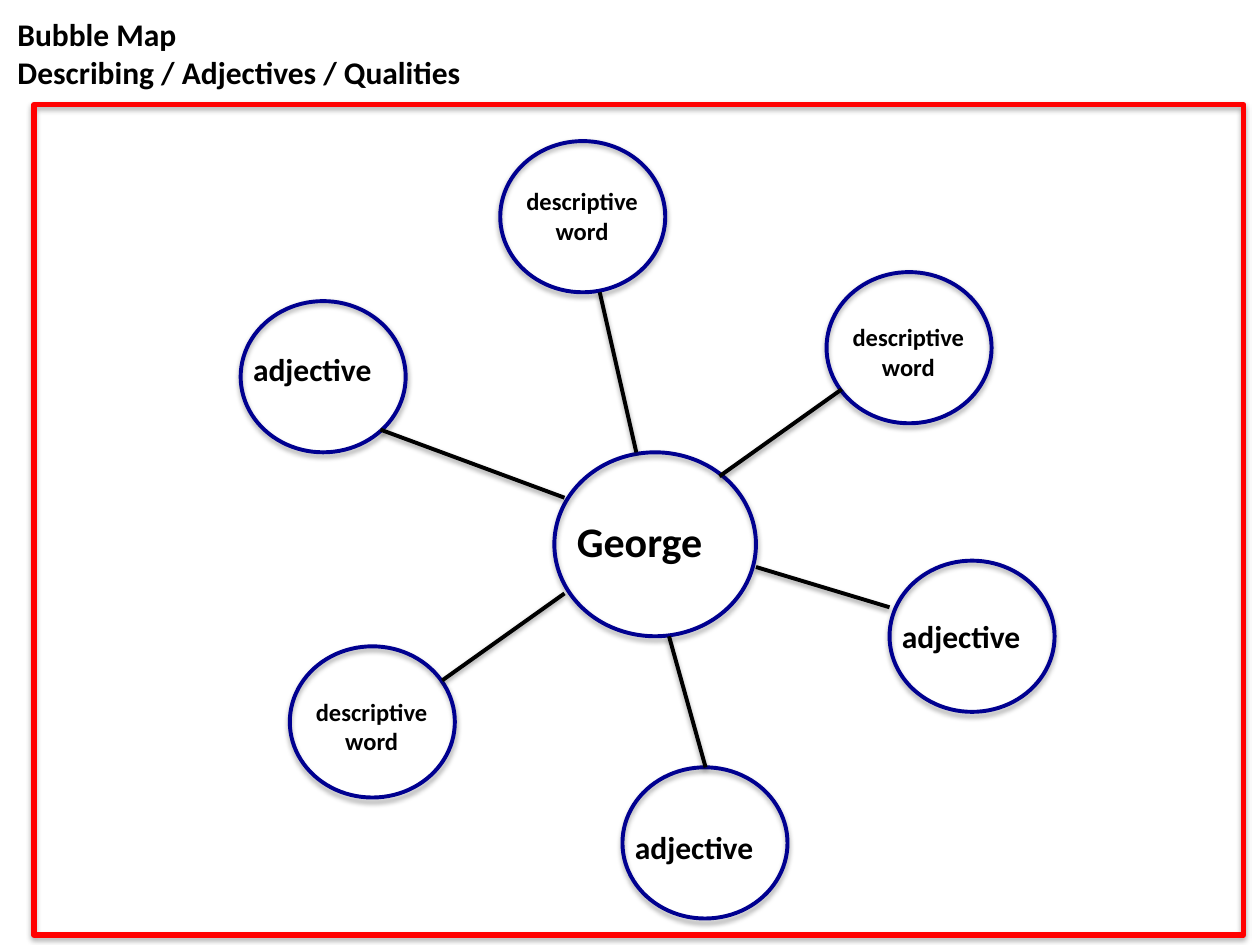
import pptx
import pptx.util
import pptx.dml.color
import pptx.enum.shapes
import pptx.enum.text
import pptx.oxml
import pptx.oxml.ns

# Places are (column, row) on a grid of 100 columns by 75 rows.
COLS, ROWS = 100, 75
TITLE = ["Bubble Map", "Describing / Adjectives / Qualities"]
HUB = "George"
WORD = ["descriptive", "word"]
ADJ = ["adjective"]
# label, corner of bubble, drop to label, outer and hub end of spoke
BUBBLES = [
    (WORD, (65.6, 21.6), 3.5, (66.8, 30.9), (57.1, 37.8)),
    (ADJ, (70.6, 44.5), 4.0, (70.6, 48.2), (60.0, 45.0)),
    (ADJ, (49.4, 60.9), 4.3, (56.0, 60.9), (53.1, 50.5)),
    (WORD, (23.0, 51.3), 3.5, (35.1, 54.0), (44.8, 47.1)),
    (ADJ, (19.1, 23.9), 3.4, (30.2, 34.1), (44.8, 39.5)),
    (WORD, (39.7, 11.2), 3.1, (47.6, 23.2), (50.5, 35.9)),
]
SIZE = (13.1, 12)
THEME = {
    "font": "Calibri", "ink": "000000", "ring": "000090", "frame": "FF0000",
    "hub": 24, "head": 18, "word": 14, "line": 2.25, "edge": 3,
}
OVAL = pptx.enum.shapes.MSO_SHAPE.OVAL
RECT = pptx.enum.shapes.MSO_SHAPE.RECTANGLE
LEFT = pptx.enum.text.PP_ALIGN.LEFT
MID = pptx.enum.text.PP_ALIGN.CENTER

deck = pptx.Presentation()
deck.slide_width = pptx.util.Inches(10)
deck.slide_height = pptx.util.Inches(7.5)
slide = deck.slides.add_slide(deck.slide_layouts[6])


def grid(*cells):
    """Turn alternating column and row counts into slide lengths."""
    units = (deck.slide_width / COLS, deck.slide_height / ROWS)
    return [round(n * units[i % 2]) for i, n in enumerate(cells)]


def paint(item, color, width, alpha, gap):
    """Set the outline and a soft shadow straight below it."""
    item.line.color.rgb = pptx.dml.color.RGBColor.from_string(color)
    item.line.width = pptx.util.Pt(width)
    blur, dist = pptx.util.Pt(3.1), pptx.util.Pt(gap)
    item._element.spPr.append(pptx.oxml.parse_xml(
        f'<a:effectLst {pptx.oxml.ns.nsdecls("a")}>'
        f'<a:outerShdw blurRad="{blur}" dist="{dist}" dir="5400000" rotWithShape="0">'
        f'<a:srgbClr val="{THEME["ink"]}"><a:alpha val="{alpha}000"/></a:srgbClr>'
        '</a:outerShdw></a:effectLst>'))


def shape(kind, at, size, color, width):
    item = slide.shapes.add_shape(kind, *grid(*at, *size))
    item.fill.background()
    paint(item, color, width, 35, 1.8)


def spoke(start, end):
    kind = pptx.enum.shapes.MSO_CONNECTOR.STRAIGHT
    item = slide.shapes.add_connector(kind, *grid(*start, *end))
    paint(item, THEME["ink"], THEME["line"], 38, 1.6)


def label(lines, at, size, points, align=LEFT):
    frame = slide.shapes.add_textbox(*grid(*at, *size)).text_frame
    frame.word_wrap = False
    frame.auto_size = pptx.enum.text.MSO_AUTO_SIZE.SHAPE_TO_FIT_TEXT
    style = {"name": THEME["font"], "size": pptx.util.Pt(points), "bold": True}
    for i, line in enumerate(lines):
        para = frame.add_paragraph() if i else frame.paragraphs[0]
        para.alignment = align
        run = para.add_run()
        run.text = line
        for key, value in style.items():
            setattr(run.font, key, value)
        run.font.color.rgb = pptx.dml.color.RGBColor.from_string(THEME["ink"])


shape(OVAL, (44, 35.9), (16, 14.6), THEME["ring"], THEME["line"])
for _, at, _, _, _ in BUBBLES:
    shape(OVAL, at, SIZE, THEME["ring"], THEME["line"])
for _, _, _, start, end in BUBBLES:
    spoke(start, end)
for text, (x, y), drop, _, _ in BUBBLES:
    if text is WORD:
        label(text, (x, y + drop), (13, 5.7), THEME["word"], MID)
    else:
        label(text, (x, y + drop), (13.5, 4), THEME["head"])
label([HUB], (44.8, 40.4), (14.4, 5), THEME["hub"])
label(TITLE, (0.4, 0.7), (45.9, 7.1), THEME["head"])
shape(RECT, (2.7, 8.3), (96, 65.9), THEME["frame"], THEME["edge"])

deck.save("out.pptx")
